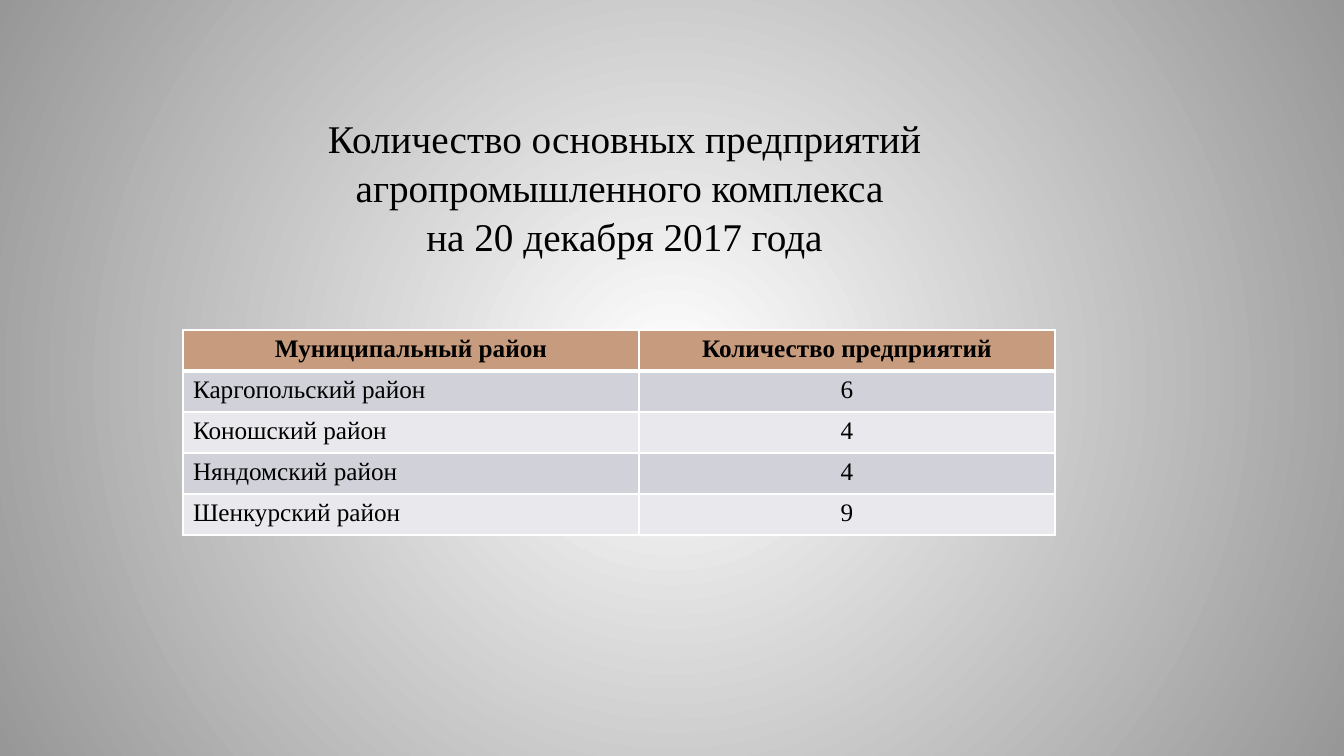
"""Build a slide with a title and a table of farm enterprises by district."""
from typing import NamedTuple

from lxml.etree import SubElement
from pptx import Presentation
from pptx.dml.color import RGBColor
from pptx.enum.text import MSO_ANCHOR, PP_ALIGN
from pptx.oxml.ns import qn
from pptx.util import Pt

SCALE = 914400 / 100.8
FONT = "Times New Roman"
COLORS = {
    "text": "000000",
    "line": "FFFFFF",
    "head": "C69B7E",
    "odd": "D1D1DA",
    "even": "E9E9ED",
    "inner": "FFFFFF",
    "outer": "979797",
}
TITLE = (
    "Количество основных предприятий агропромышленного комплекса \v"
    "на 20 декабря 2017 года"
)
WIDTHS = (456, 416)
HEIGHT = 41


class Row(NamedTuple):
    name: str
    count: str


HEAD = Row("Муниципальный район", "Количество предприятий")
ROWS = (
    Row("Каргопольский район", "6"),
    Row("Коношский район", "4"),
    Row("Няндомский район", "4"),
    Row("Шенкурский район", "9"),
)


def px(size: int) -> int:
    return round(size * SCALE)


def color(name: str) -> RGBColor:
    return RGBColor.from_string(COLORS[name])


def write(frame, text: str, *, size: int, bold: bool = False,
          align=PP_ALIGN.CENTER, space: float | None = None) -> None:
    para = frame.paragraphs[0]
    para.text = text
    para.alignment = align
    para.line_spacing = space
    for run in para.runs:
        run.font.name = FONT
        run.font.size = Pt(size)
        run.font.bold = bold
        run.font.color.rgb = color("text")


def border(cell, **widths: int) -> None:
    props = cell._tc.get_or_add_tcPr()
    for side in "LRTB":
        line = SubElement(props, qn(f"a:ln{side}"), w=str(Pt(widths.get(side, 1))))
        fill = SubElement(line, qn("a:solidFill"))
        SubElement(fill, qn("a:srgbClr"), val=COLORS["line"])


def paint(slide) -> None:
    fill = slide.background.fill
    fill.gradient()
    for stop, place, name in zip(fill.gradient_stops, (0, 1), ("inner", "outer")):
        stop.position = place
        stop.color.rgb = color(name)
    grad = next(slide.element.iter(qn("a:gradFill")))
    grad.remove(grad.find(qn("a:lin")))
    ring = SubElement(grad, qn("a:path"), path="circle")
    SubElement(ring, qn("a:fillToRect"), dict.fromkeys("ltrb", "50000"))


def add_title(slide) -> None:
    box = slide.shapes.add_textbox(px(274), px(123), px(701), px(126))
    frame = box.text_frame
    frame.word_wrap = True
    frame.vertical_anchor = MSO_ANCHOR.MIDDLE
    write(frame, TITLE, size=28, space=1.04)


def add_grid(slide) -> None:
    rows = (HEAD, *ROWS)
    grid = slide.shapes.add_table(
        len(rows), len(WIDTHS), px(183), px(330),
        px(sum(WIDTHS)), px(HEIGHT * len(rows)),
    ).table
    for col, width in zip(grid.columns, WIDTHS):
        col.width = px(width)
    for i, row in enumerate(rows):
        grid.rows[i].height = px(HEIGHT)
        shade = "head" if i == 0 else "odd" if i % 2 else "even"
        for j, text in enumerate(row):
            cell = grid.cell(i, j)
            border(cell, T=3 if i == 1 else 1, B=3 if i == 0 else 1)
            cell.fill.solid()
            cell.fill.fore_color.rgb = color(shade)
            left = i > 0 and j == 0
            write(cell.text_frame, text, size=18, bold=i == 0,
                  align=PP_ALIGN.LEFT if left else PP_ALIGN.CENTER)


def main() -> None:
    deck = Presentation()
    deck.slide_width, deck.slide_height = px(1344), px(756)
    slide = deck.slides.add_slide(deck.slide_layouts[6])
    paint(slide)
    add_title(slide)
    add_grid(slide)
    deck.save("out.pptx")


if __name__ == "__main__":
    main()
